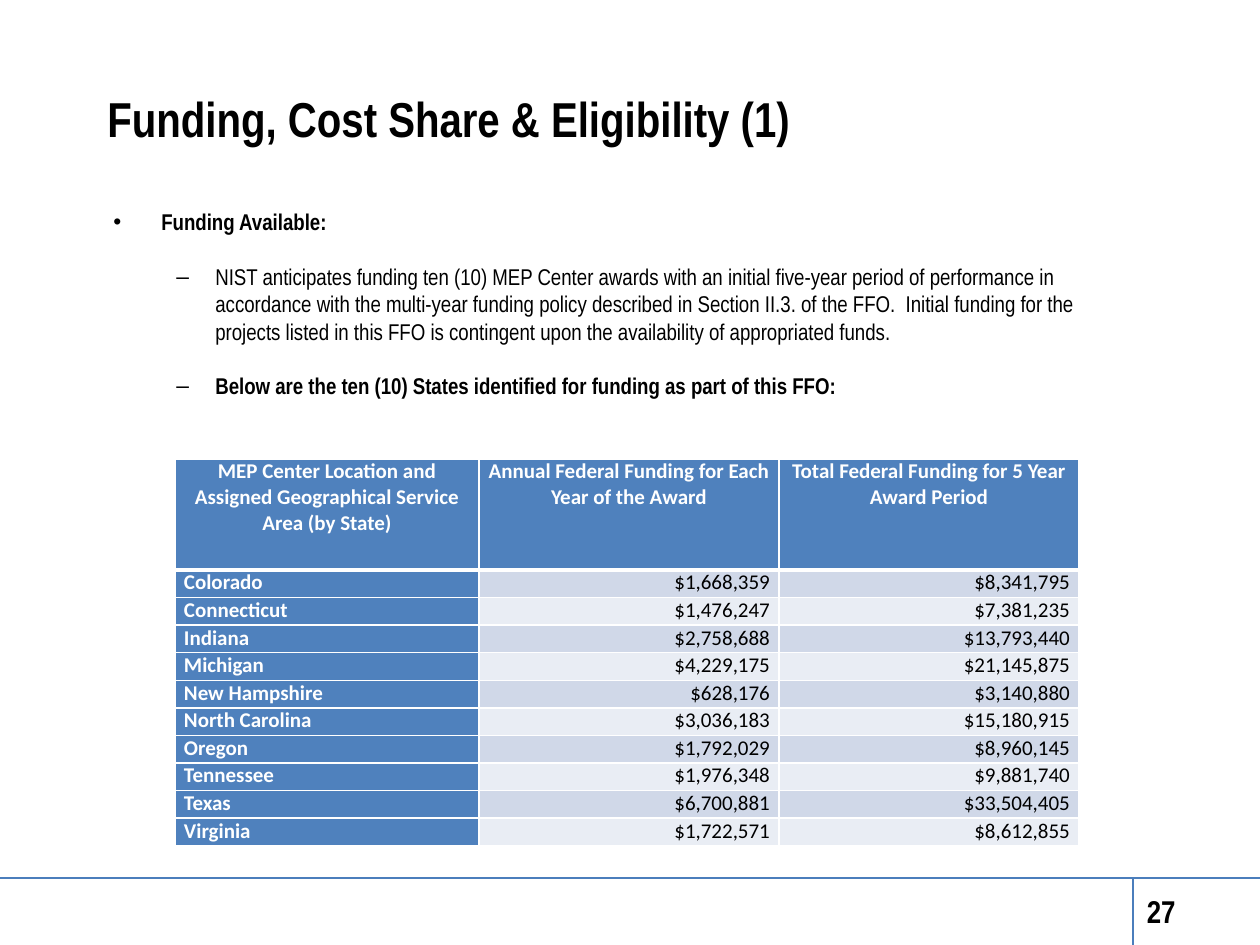
"""Build the funding, cost share and eligibility slide."""
from dataclasses import dataclass

from lxml.etree import SubElement
from pptx import Presentation
from pptx.dml.color import RGBColor
from pptx.enum.shapes import MSO_CONNECTOR
from pptx.enum.text import MSO_ANCHOR, PP_ALIGN
from pptx.oxml import parse_xml
from pptx.oxml.ns import nsdecls, qn
from pptx.util import Emu, Pt

COLORS = {
    "ink": "000000",
    "white": "FFFFFF",
    "rule": "4B7EBC",
    "header": "4F81BD",
    "odd": "D0D8E8",
    "even": "E9EDF4",
}
FORMATS = {
    "title": {"name": "Arial Narrow", "size": Pt(28), "bold": True},
    "strong": {"name": "Arial Narrow", "size": Pt(13), "bold": True},
    "plain": {"name": "Arial Narrow", "size": Pt(13), "bold": False},
    "number": {"name": "Arial Narrow", "size": Pt(18), "bold": True},
    "heading": {"name": "Calibri", "size": Pt(12), "bold": True},
    "amount": {"name": "Calibri", "size": Pt(12), "bold": False},
}
HEADINGS = (
    "MEP Center Location and Assigned Geographical Service Area (by State)",
    "Annual Federal Funding for Each Year of the Award",
    "Total Federal Funding for 5 Year Award Period",
)
COLUMN_WIDTHS = (304, 300, 300)
HEADER_HEIGHT, STATES_HEIGHT = 111, 276


@dataclass(frozen=True)
class Bullet:
    text: str
    format: str
    mark: str
    level: int
    margin: int
    hang: int
    before: float = 15.6


@dataclass(frozen=True)
class StateFunding:
    state: str
    annual: str
    total: str


BULLETS = (
    Bullet("Funding Available:", "strong", "•", 0, 48, 48, 0),
    Bullet(
        "NIST anticipates funding ten (10) MEP Center awards with an initial "
        "five-year period of performance in accordance with the multi-year "
        "funding policy described in Section II.3. of the FFO.  Initial funding "
        "for the projects listed in this FFO is contingent upon the availability "
        "of appropriated funds.",
        "plain", "–", 1, 102, 39,
    ),
    Bullet(
        "Below are the ten (10) States identified for funding as part of this FFO:",
        "strong", "–", 1, 102, 39,
    ),
)
FUNDING = (
    StateFunding("Colorado", "$1,668,359", "$8,341,795"),
    StateFunding("Connecticut", "$1,476,247", "$7,381,235"),
    StateFunding("Indiana", "$2,758,688", "$13,793,440"),
    StateFunding("Michigan", "$4,229,175", "$21,145,875"),
    StateFunding("New Hampshire", "$628,176", "$3,140,880"),
    StateFunding("North Carolina", "$3,036,183", "$15,180,915"),
    StateFunding("Oregon", "$1,792,029", "$8,960,145"),
    StateFunding("Tennessee", "$1,976,348", "$9,881,740"),
    StateFunding("Texas", "$6,700,881", "$33,504,405"),
    StateFunding("Virginia", "$1,722,571", "$8,612,855"),
)


def px(length: int) -> Emu:
    return Emu(round(length * 914400 / 126))


def write(paragraph, text: str, style: str, color: str = "ink") -> None:
    run = paragraph.add_run()
    run.text = text
    for attribute, value in FORMATS[style].items():
        setattr(run.font, attribute, value)
    run.font.color.rgb = RGBColor.from_string(COLORS[color])


def add_frame(slide, left: int, top: int, width: int, height: int, anchor=MSO_ANCHOR.TOP):
    frame = slide.shapes.add_textbox(px(left), px(top), px(width), px(height)).text_frame
    frame.word_wrap = True
    frame.vertical_anchor = anchor
    return frame


def add_rule(slide, x1: int, y1: int, x2: int, y2: int) -> None:
    rule = slide.shapes.add_connector(MSO_CONNECTOR.STRAIGHT, px(x1), px(y1), px(x2), px(y2))
    rule.line.color.rgb = RGBColor.from_string(COLORS["rule"])
    rule.line.width = Pt(0.75)
    SubElement(rule._element.spPr, qn("a:effectLst"))


def add_bullet(paragraph, bullet: Bullet) -> None:
    paragraph.level = bullet.level
    properties = paragraph._p.get_or_add_pPr()
    properties.set("marL", str(px(bullet.margin)))
    properties.set("indent", str(-px(bullet.hang)))
    SubElement(properties, qn("a:buFont")).set("typeface", "Arial")
    SubElement(properties, qn("a:buChar")).set("char", bullet.mark)
    paragraph.space_before = Pt(bullet.before)
    write(paragraph, bullet.text, bullet.format)


def set_borders(cell, top: int, bottom: int) -> None:
    properties = cell._tc.get_or_add_tcPr()
    for index, (side, points) in enumerate(
        {"lnL": 1, "lnR": 1, "lnT": top, "lnB": bottom}.items()
    ):
        properties.insert(index, parse_xml(
            f'<a:{side} {nsdecls("a")} w="{Pt(points)}"><a:solidFill>'
            f'<a:srgbClr val="{COLORS["white"]}"/></a:solidFill></a:{side}>'
        ))


def fill_cell(cell, text: str, style: str, color: str, fill: str, align) -> None:
    margins = {"margin_left": 9, "margin_right": 9, "margin_top": 0, "margin_bottom": 0}
    for attribute, length in margins.items():
        setattr(cell, attribute, px(length))
    cell.fill.solid()
    cell.fill.fore_color.rgb = RGBColor.from_string(COLORS[fill])
    paragraph = cell.text_frame.paragraphs[0]
    paragraph.alignment = align
    write(paragraph, text, style, color)


def add_funding_table(slide) -> None:
    table = slide.shapes.add_table(
        len(FUNDING) + 1, len(HEADINGS), px(175), px(459),
        px(sum(COLUMN_WIDTHS)), px(HEADER_HEIGHT + STATES_HEIGHT),
    ).table
    for column, width in zip(table.columns, COLUMN_WIDTHS):
        column.width = px(width)
    for row in table.rows:
        row.height = px(STATES_HEIGHT) // len(FUNDING)
    table.rows[0].height = px(HEADER_HEIGHT)

    for column, heading in enumerate(HEADINGS):
        cell = table.cell(0, column)
        fill_cell(cell, heading, "heading", "white", "header", PP_ALIGN.CENTER)
        set_borders(cell, 1, 3)
    for row, funding in enumerate(FUNDING, 1):
        band = "odd" if row % 2 else "even"
        fill_cell(table.cell(row, 0), funding.state, "heading", "white", "header", PP_ALIGN.LEFT)
        for column, amount in enumerate((funding.annual, funding.total), 1):
            fill_cell(table.cell(row, column), amount, "amount", "ink", band, PP_ALIGN.RIGHT)
        for column in range(len(HEADINGS)):
            set_borders(table.cell(row, column), 3 if row == 1 else 1, 1)


def main() -> None:
    deck = Presentation()
    deck.slide_width, deck.slide_height = px(1260), px(945)
    slide = deck.slides.add_slide(deck.slide_layouts[6])

    add_rule(slide, 0, 878, 1260, 878)
    add_rule(slide, 1133, 878, 1133, 945)

    title = add_frame(slide, 95, 76, 1113, 84, MSO_ANCHOR.MIDDLE)
    write(title.paragraphs[0], "Funding, Cost Share & Eligibility (1)", "title")

    body = add_frame(slide, 101, 174, 1005, 692)
    body.margin_top = px(34)
    for index, bullet in enumerate(BULLETS):
        add_bullet(body.add_paragraph() if index else body.paragraphs[0], bullet)

    number = add_frame(slide, 431, 896, 757, 30, MSO_ANCHOR.MIDDLE).paragraphs[0]
    number.alignment = PP_ALIGN.RIGHT
    write(number, "27", "number")

    add_funding_table(slide)
    deck.save("out.pptx")


if __name__ == "__main__":
    main()
